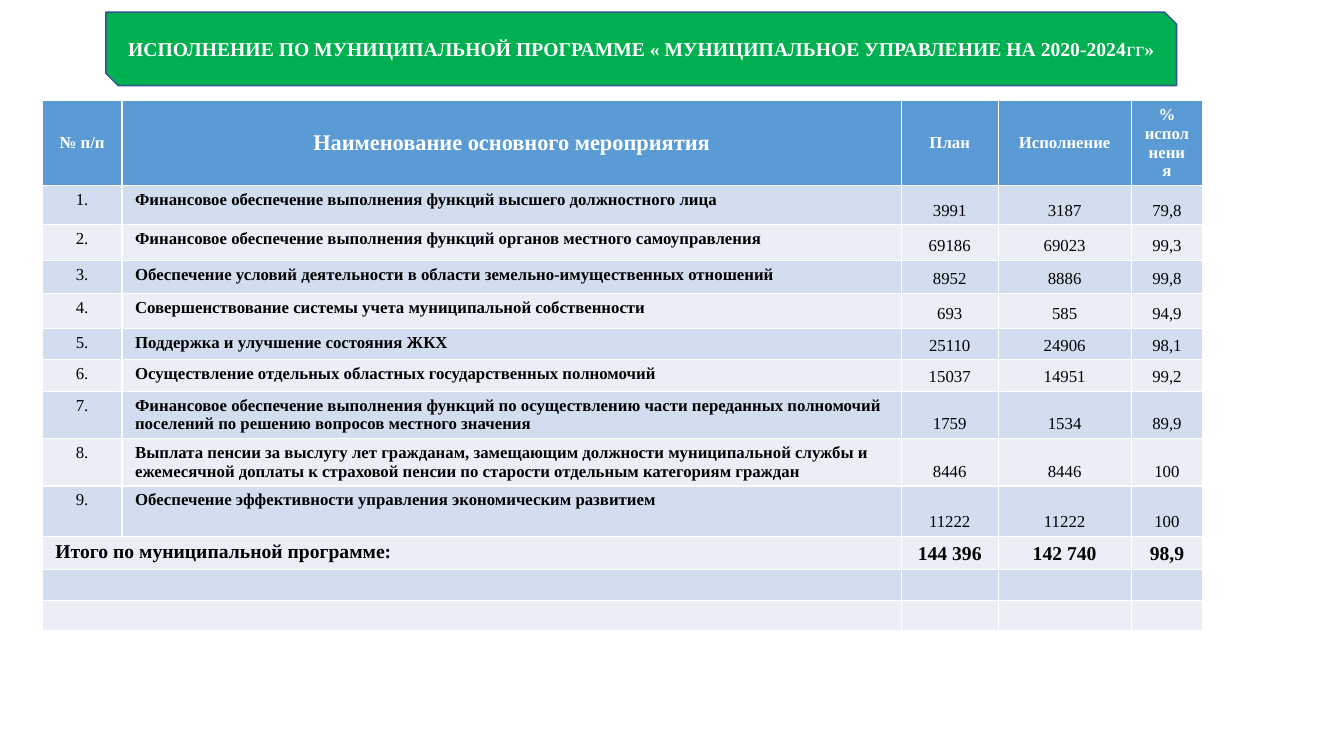
from pptx import Presentation
from pptx.dml.color import RGBColor
from pptx.enum.shapes import MSO_SHAPE as SHAPE
from pptx.enum.text import MSO_ANCHOR as ANCHOR, PP_ALIGN as ALIGN
from pptx.util import Inches, Pt

FONT = "Times New Roman"
WHITE, BLACK = "FFFFFF", "000000"
GREEN, OUTLINE = "00B050", "325491"
HEADER_FILL, BANDS = "5B9BD5", ("D2DEEF", "EAEFF7")

COL_WIDTHS = (0.79, 7.73, 0.96, 1.32, 0.71)
ROW_HEIGHTS = (0.84, 0.39, 0.35, 0.33, 0.35, 0.31, 0.31,
               0.47, 0.47, 0.5, 0.33, 0.29, 0.29)
HEADERS = ("№ п/п", "Наименование основного мероприятия", "План",
           "Исполнение", "% исполнения")
MEASURES = (
    ("Финансовое обеспечение выполнения функций высшего должностного лица",
     "3991", "3187", "79,8"),
    ("Финансовое обеспечение выполнения функций органов местного самоуправления",
     "69186", "69023", "99,3"),
    ("Обеспечение условий деятельности в области земельно-имущественных отношений",
     "8952", "8886", "99,8"),
    ("Совершенствование системы учета муниципальной собственности",
     "693", "585", "94,9"),
    ("Поддержка и улучшение состояния ЖКХ", "25110", "24906", "98,1"),
    ("Осуществление отдельных областных государственных полномочий",
     "15037", "14951", "99,2"),
    ("Финансовое обеспечение выполнения функций по осуществлению части "
     "переданных полномочий поселений по решению вопросов местного значения",
     "1759", "1534", "89,9"),
    ("Выплата пенсии за выслугу лет гражданам, замещающим должности "
     "муниципальной службы и ежемесячной доплаты к страховой пенсии по "
     "старости отдельным категориям граждан", "8446", "8446", "100"),
    ("Обеспечение эффективности управления экономическим развитием",
     "11222", "11222", "100"),
)
TOTALS = ("Итого по муниципальной программе:", "", "144 396", "142 740", "98,9")


def rgb(color):
    return RGBColor.from_string(color)


def add_run(p, text, size, color, bold):
    r = p.add_run()
    r.text = text
    r.font.name = FONT
    r.font.size = Pt(size)
    r.font.bold = bold
    r.font.color.rgb = rgb(color)


def add_banner(slide):
    sp = slide.shapes.add_shape(SHAPE.SNIP_2_DIAG_RECTANGLE, Inches(1.05),
                                Inches(0.12), Inches(10.62), Inches(0.73))
    sp.shadow.inherit = False
    sp.fill.solid()
    sp.fill.fore_color.rgb = rgb(GREEN)
    sp.line.color.rgb = rgb(OUTLINE)
    sp.line.width = Pt(1)
    tf = sp.text_frame
    tf.word_wrap = True
    tf.vertical_anchor = ANCHOR.MIDDLE
    p = tf.paragraphs[0]
    p.alignment = ALIGN.CENTER
    title = ("ИСПОЛНЕНИЕ ПО МУНИЦИПАЛЬНОЙ ПРОГРАММЕ "
             "« МУНИЦИПАЛЬНОЕ УПРАВЛЕНИЕ НА 2020-2024")
    for text, size in ((title, 14), ("ГГ", 10), ("»", 14)):
        add_run(p, text, size, WHITE, True)


def fill_cell(cell, text, fill, size=12, color=BLACK, bold=False,
              anchor=ANCHOR.TOP, align=ALIGN.CENTER):
    cell.fill.solid()
    cell.fill.fore_color.rgb = rgb(fill)
    cell.margin_left = cell.margin_right = Inches(0.13)
    cell.margin_top = cell.margin_bottom = Inches(0.05)
    cell.vertical_anchor = anchor
    p = cell.text_frame.paragraphs[0]
    p.alignment = align
    if text:
        add_run(p, text, size, color, bold)
    else:
        p._p.get_or_add_endParaRPr().set("sz", str(size * 100))


def add_program_table(slide):
    table = slide.shapes.add_table(
        len(ROW_HEIGHTS), len(COL_WIDTHS), Inches(0.42), Inches(1),
        Inches(sum(COL_WIDTHS)), Inches(sum(ROW_HEIGHTS))).table
    for column, width in zip(table.columns, COL_WIDTHS):
        column.width = Inches(width)
    for row, height in zip(table.rows, ROW_HEIGHTS):
        row.height = Inches(height)

    for c, text in enumerate(HEADERS):
        fill_cell(table.cell(0, c), text, HEADER_FILL, 16 if c == 1 else 12,
                  WHITE, True, ANCHOR.MIDDLE)

    numbered = [(f"{n}.", *measure) for n, measure in enumerate(MEASURES, 1)]
    total_row = len(numbered) + 1
    blank = ("",) * len(COL_WIDTHS)
    for i, values in enumerate([*numbered, TOTALS, blank, blank], 1):
        is_total = i == total_row
        if i >= total_row:
            table.cell(i, 0).merge(table.cell(i, 1))
        for c, text in enumerate(values):
            is_name = c == (0 if is_total else 1)
            fill_cell(table.cell(i, c), text, BANDS[(i - 1) % 2],
                      14 if is_total else 12,
                      bold=is_total or is_name,
                      anchor=ANCHOR.BOTTOM if c > 1 else ANCHOR.TOP,
                      align=ALIGN.LEFT if is_name else ALIGN.CENTER)


def main():
    prs = Presentation()
    prs.slide_width, prs.slide_height = Inches(13.33), Inches(7.5)
    slide = prs.slides.add_slide(prs.slide_layouts[6])
    add_banner(slide)
    add_program_table(slide)
    prs.save("out.pptx")


if __name__ == "__main__":
    main()
